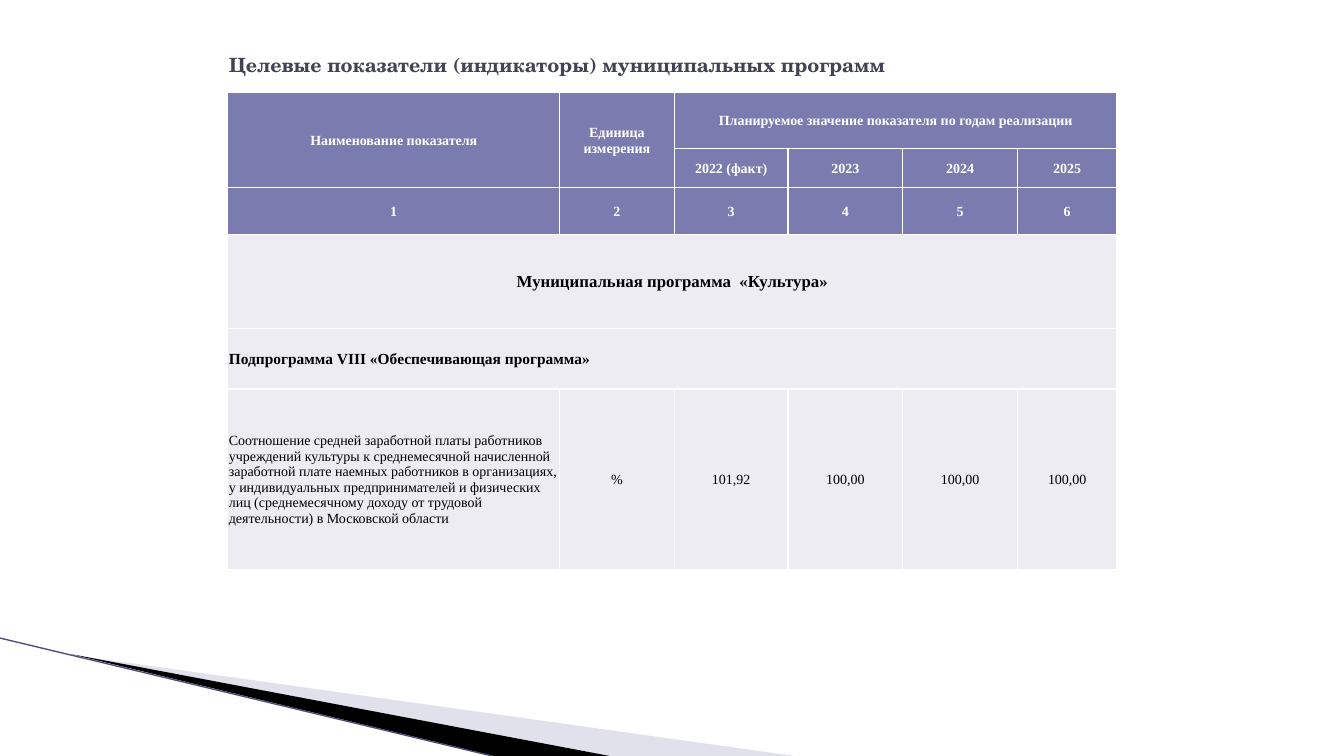
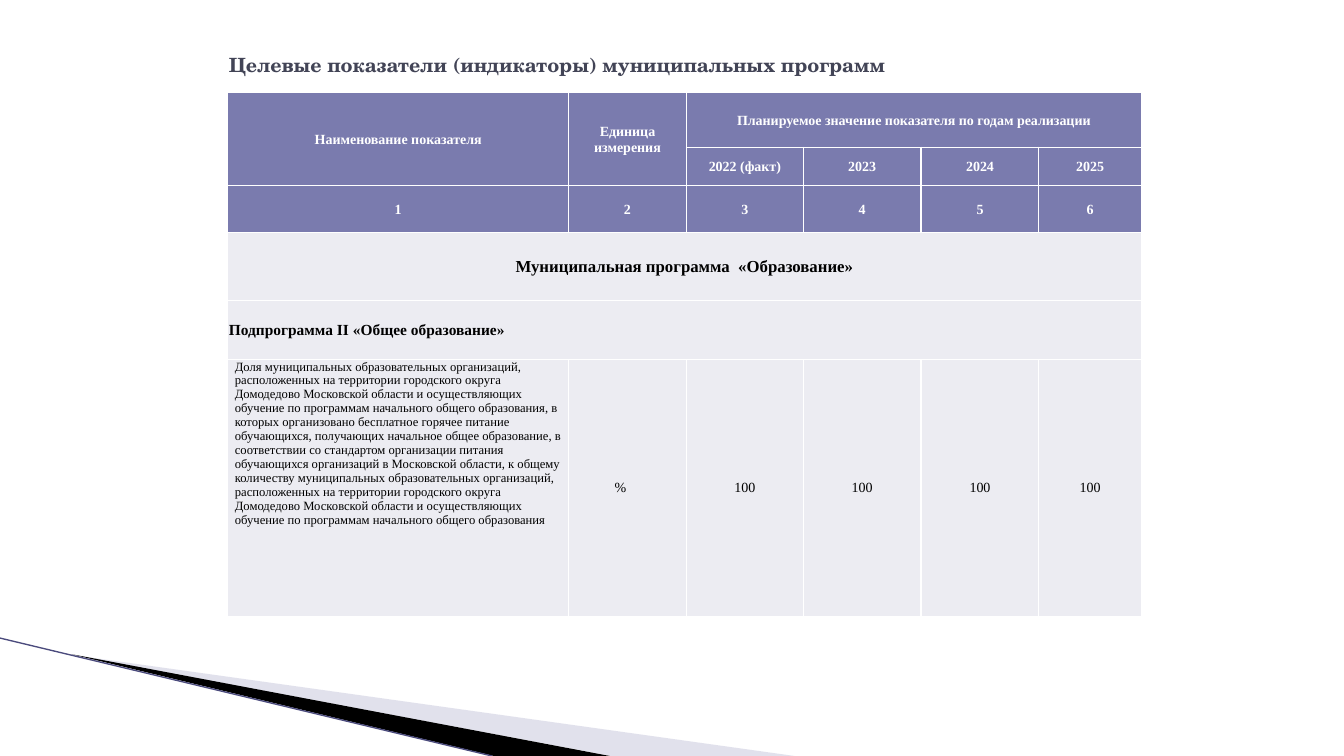
"""Builds two slides of programme targets as tables."""
from lxml import etree
from pptx import Presentation, util as u
from pptx.dml.color import RGBColor
from pptx.enum import shapes, text
from pptx.oxml.ns import qn

WIDE, HIGH = 13.33, 7.5
WHITE = RGBColor(0xFF, 0xFF, 0xFF)
BLACK = RGBColor(0, 0, 0)
INK = RGBColor(0x42, 0x44, 0x56)
HEAD = RGBColor(0x7A, 0x7B, 0xAE)
PALE = RGBColor(0xEC, 0xEC, 0xF2)
MIST = RGBColor(0xB6, 0xB6, 0xD1)
EDGE = RGBColor(0x4B, 0x4B, 0x7D)
SERIF, BOOK = "Times New Roman", "TeX Gyre Schola"
TITLE = "Целевые показатели (индикаторы) муниципальных программ"
SHARES = (0.373, 0.129, 0.128, 0.129, 0.129, 0.112)
YEARS = ("2022 (факт)", "2023", "2024", "2025")
TIGHT = (0.01, 0.01, 0.01, 0)
LOOSE = (0.07, 0, 0.07, 0)
MID, TOP = text.MSO_ANCHOR.MIDDLE, text.MSO_ANCHOR.TOP
LEFT, MIDDLE = text.PP_ALIGN.LEFT, text.PP_ALIGN.CENTER

PAGES = (
    dict(box=(2.26, 0.92, 8.82), rows=(0.55, 0.39, 0.47, 0.93, 0.6, 1.79),
         name="Муниципальная программа  «Культура»",
         part="Подпрограмма VIII «Обеспечивающая программа»",
         goal="Соотношение средней заработной платы работников учреждений "
              "культуры к среднемесячной начисленной заработной плате наемных "
              "работников в организациях, у индивидуальных предпринимателей и "
              "физических лиц (среднемесячному доходу от трудовой "
              "деятельности) в Московской области",
         look=dict(size=10, inset=TIGHT), unit=TIGHT, inset=TIGHT,
         values=("101,92", "100,00", "100,00", "100,00")),
    dict(box=(2.26, 0.92, 9.06), rows=(0.54, 0.38, 0.47, 0.67, 0.59, 2.55),
         name="Муниципальная программа  «Образование»",
         part="Подпрограмма II «Общее образование»",
         goal="Доля муниципальных образовательных организаций, расположенных "
              "на территории городского округа Домодедово Московской области и "
              "осуществляющих обучение по программам начального общего "
              "образования, в которых организовано бесплатное горячее питание "
              "обучающихся, получающих начальное общее образование, в "
              "соответствии со стандартом организации питания обучающихся "
              "организаций в Московской области, к общему количеству "
              "муниципальных образовательных организаций, расположенных на "
              "территории городского округа Домодедово Московской области и "
              "осуществляющих обучение по программам начального общего "
              "образования",
         look=dict(size=9, inset=LOOSE, anchor=TOP),
         unit=(0.07, 0, 0.21, 0), inset=LOOSE, values=("100",) * 4),
)


def style(para, size, color, face, bold):
    """Formats the runs of a paragraph."""
    for run in para.runs:
        font = run.font
        font.size, font.name, font.bold = u.Pt(size), face, bold
        font.color.rgb = color


def wedge(page, points, color, alpha=None):
    """Draws a filled outline."""
    spots = [(u.Inches(x), u.Inches(y)) for x, y in points]
    form = page.shapes.build_freeform(*spots[0])
    form.add_line_segments(spots[1:], close=True)
    shape = form.convert_to_shape()
    shape.shadow.inherit = False
    shape.fill.solid()
    shape.fill.fore_color.rgb = color
    shape.line.fill.background()
    if alpha:
        tone = next(shape.element.iter(qn("a:srgbClr")))
        etree.SubElement(tone, qn("a:alpha"), val=str(alpha * 1000))
    return shape


def swoosh(page, layout):
    """Draws the corner wedges and moves them to the layout."""
    pale = wedge(page, [(0.73, 6.5), (7.88, HIGH), (6.06, HIGH)], MIST, 40)
    dark = wedge(page, [(0.71, 6.49), (6.05, HIGH), (4.9, HIGH)], BLACK)
    line = page.shapes.add_connector(
        shapes.MSO_CONNECTOR.STRAIGHT, 0, u.Inches(6.33),
        u.Inches(4.88), u.Inches(HIGH))
    line.line.color.rgb = EDGE
    line.line.width = u.Pt(0.95)
    etree.SubElement(line.element.spPr, qn("a:effectLst"))
    for shape in (pale, dark, line):
        layout.shapes.element.append(shape.element)


def title(page):
    """Places and formats the title."""
    head = page.shapes.title
    head.left, head.top, head.width, head.height = (
        u.Inches(n) for n in (2.17, 0.3, 9, 0.69))
    frame = head.text_frame
    frame.text = TITLE
    frame.word_wrap, frame.vertical_anchor = True, MID
    frame.auto_size = text.MSO_AUTO_SIZE.NONE
    frame.paragraphs[0].alignment = LEFT
    style(frame.paragraphs[0], 14, INK, BOOK, True)


def border(cell):
    """Gives a cell thin white borders."""
    props = cell._tc.get_or_add_tcPr()
    for side in ("lnL", "lnR", "lnT", "lnB"):
        line = etree.SubElement(props, qn("a:" + side), w=str(u.Pt(1)))
        fill = etree.SubElement(line, qn("a:solidFill"))
        etree.SubElement(fill, qn("a:srgbClr"), val=str(WHITE))


def put(cell, words, size=10, color=BLACK, bold=False, align=MIDDLE,
        inset=TIGHT, anchor=MID):
    """Writes one formatted cell."""
    cell.text_frame.text = words
    cell.vertical_anchor = anchor
    (cell.margin_left, cell.margin_top,
     cell.margin_right, cell.margin_bottom) = map(u.Inches, inset)
    para = cell.text_frame.paragraphs[0]
    para.alignment = align
    style(para, size, color, SERIF, bold)


def header(grid):
    """Fills the three header rows."""
    spans = (((0, 0), (1, 0)), ((0, 1), (1, 1)), ((0, 2), (0, 5)))
    names = ("Наименование показателя", "Единица измерения",
             "Планируемое значение показателя по годам реализации")
    for (start, end), name in zip(spans, names):
        grid.cell(*start).merge(grid.cell(*end))
        put(grid.cell(*start), name, color=WHITE, bold=True)
    for col, year in enumerate(YEARS, 2):
        put(grid.cell(1, col), year, color=WHITE, bold=True)
    for col in range(len(SHARES)):
        put(grid.cell(2, col), str(col + 1), color=WHITE, bold=True)


def body(grid, data):
    """Fills the programme rows and the target row."""
    for row in (3, 4):
        grid.cell(row, 0).merge(grid.cell(row, 5))
    put(grid.cell(3, 0), data["name"], size=12, bold=True)
    put(grid.cell(4, 0), data["part"], size=11, bold=True, align=LEFT)
    put(grid.cell(5, 0), data["goal"], align=LEFT, **data["look"])
    put(grid.cell(5, 1), "%", inset=data["unit"])
    for col, value in enumerate(data["values"], 2):
        put(grid.cell(5, col), value, inset=data["inset"])


def table(page, data):
    """Builds the target table in its box."""
    left, top, width = data["box"]
    rows = data["rows"]
    grid = page.shapes.add_table(
        len(rows), len(SHARES), u.Inches(left), u.Inches(top),
        u.Inches(width), u.Inches(sum(rows))).table
    for col, share in zip(grid.columns, SHARES):
        col.width = u.Inches(width * share)
    for num, (row, tall) in enumerate(zip(grid.rows, rows)):
        row.height = u.Inches(tall)
        for cell in row.cells:
            border(cell)
            cell.fill.solid()
            cell.fill.fore_color.rgb = HEAD if num < 3 else PALE
    header(grid)
    body(grid, data)


def main():
    """Builds and saves the slides."""
    deck = Presentation()
    deck.slide_width, deck.slide_height = u.Inches(WIDE), u.Inches(HIGH)
    layout = deck.slide_layouts[5]
    for num, data in enumerate(PAGES):
        page = deck.slides.add_slide(layout)
        if num == 0:
            swoosh(page, layout)
        title(page)
        table(page, data)
    deck.save("out.pptx")


if __name__ == "__main__":
    main()
